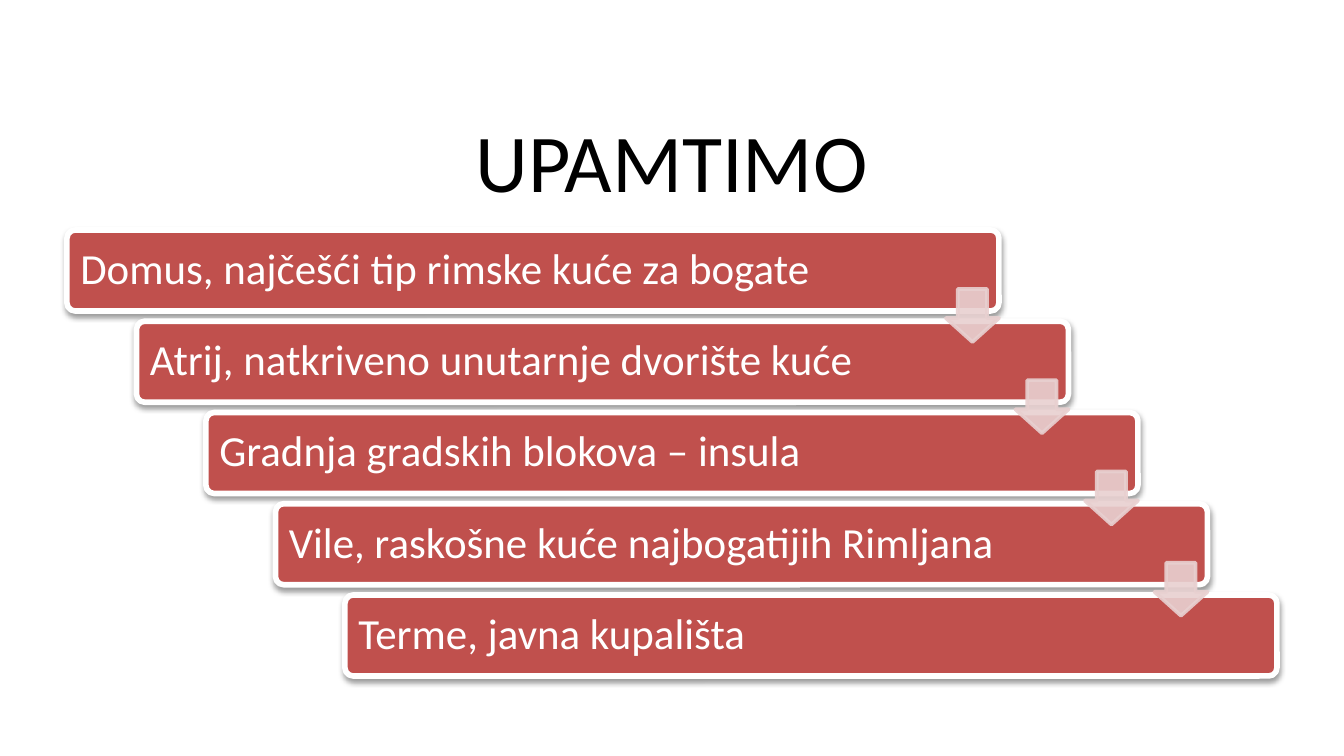
from dataclasses import dataclass

from lxml.etree import SubElement
from pptx import Presentation
from pptx.dml.color import RGBColor
from pptx.enum.shapes import MSO_SHAPE
from pptx.enum.text import MSO_ANCHOR, PP_ALIGN
from pptx.oxml.ns import qn
from pptx.util import Pt

# Content
TITLE = "UPAMTIMO"
FACTS = [
    "Domus, najčešći tip rimske kuće za bogate",
    "Atrij, natkriveno unutarnje dvorište kuće",
    "Gradnja gradskih blokova – insula",
    "Vile, raskošne kuće najbogatijih Rimljana",
    "Terme, javna kupališta",
]


@dataclass(frozen=True)
class Theme:
    font: str = "Calibri"
    title_size: int = 44
    fact_size: int = 23
    title_color: str = "000000"
    fact_color: str = "FFFFFF"
    bar_fill: str = "C0504D"
    bar_line: str = "FFFFFF"
    arrow: str = "E8D0D0"
    shadow: str = "000000"


THEME = Theme()

# Layout in px
EMU_PER_PX = 914400 / 134.4
SLIDE_W, SLIDE_H = 1344, 756
LEFT, RIGHT = 67, 1277
TITLE_TOP, TITLE_H = 113, 105
STAIRS_TOP, STAIRS_BOTTOM = 230, 676
BAR_W, BAR_H = 932, 81
BAR_INSET = 11
ARROW_SIZE, ARROW_DROP = 53, 59
STEP_X = (RIGHT - LEFT - BAR_W) / (len(FACTS) - 1)
STEP_Y = (STAIRS_BOTTOM - STAIRS_TOP - BAR_H) / (len(FACTS) - 1)


def px(length):
    return round(length * EMU_PER_PX)


def box(*lengths):
    return [px(length) for length in lengths]


def write(shape, text, size, color, align):
    frame = shape.text_frame
    frame.text = text
    frame.word_wrap = True
    frame.vertical_anchor = MSO_ANCHOR.MIDDLE
    paragraph = frame.paragraphs[0]
    paragraph.alignment = align
    paragraph.line_spacing = 0.9
    font = paragraph.runs[0].font
    font.name, font.size = THEME.font, Pt(size)
    font.color.rgb = RGBColor.from_string(color)


def add_shape(slide, preset, place, adjustments, fill, line, line_width):
    shape = slide.shapes.add_shape(preset, *box(*place))
    for index, value in enumerate(adjustments):
        shape.adjustments[index] = value
    shape.shadow.inherit = False
    shape.fill.solid()
    shape.fill.fore_color.rgb = RGBColor.from_string(fill)
    shape.line.color.rgb = RGBColor.from_string(line)
    shape.line.width = Pt(line_width)
    return shape


def set_alpha(color, percent):
    SubElement(color, qn("a:alpha"), val=str(percent * 1000))


def add_shadow(shape):
    effects = shape._element.spPr.find(qn("a:effectLst"))
    shadow = SubElement(effects, qn("a:outerShdw"), blurRad=str(Pt(3.1)),
                        dist=str(Pt(1.6)), dir="5400000", rotWithShape="0")
    set_alpha(SubElement(shadow, qn("a:srgbClr"), val=THEME.shadow), 38)


def add_bar(slide, fact, left, top):
    bar = add_shape(slide, MSO_SHAPE.ROUNDED_RECTANGLE, (left, top, BAR_W, BAR_H),
                    [0.1], THEME.bar_fill, THEME.bar_line, 3)
    add_shadow(bar)
    write(bar, fact, THEME.fact_size, THEME.fact_color, PP_ALIGN.LEFT)
    bar.text_frame.margin_left = px(BAR_INSET)


def add_arrow(slide, left, top):
    arrow = add_shape(slide, MSO_SHAPE.DOWN_ARROW, (left, top, ARROW_SIZE, ARROW_SIZE),
                      [0.55, 0.45], THEME.arrow, THEME.arrow, 2)
    for color in arrow._element.spPr.iter(qn("a:srgbClr")):
        set_alpha(color, 90)


def main():
    deck = Presentation()
    deck.slide_width, deck.slide_height = box(SLIDE_W, SLIDE_H)
    slide = deck.slides.add_slide(deck.slide_layouts[6])

    # Title
    title = slide.shapes.add_textbox(*box(LEFT, TITLE_TOP, RIGHT - LEFT, TITLE_H))
    write(title, TITLE, THEME.title_size, THEME.title_color, PP_ALIGN.CENTER)

    # Staircase of facts
    steps = [(LEFT + i * STEP_X, STAIRS_TOP + i * STEP_Y) for i in range(len(FACTS))]
    for fact, (left, top) in zip(FACTS, steps):
        add_bar(slide, fact, left, top)

    # Arrows down to the next step, flush with each bar's right end
    for left, top in steps[:-1]:
        add_arrow(slide, left + BAR_W - ARROW_SIZE, top + ARROW_DROP)

    deck.save("out.pptx")


if __name__ == "__main__":
    main()
